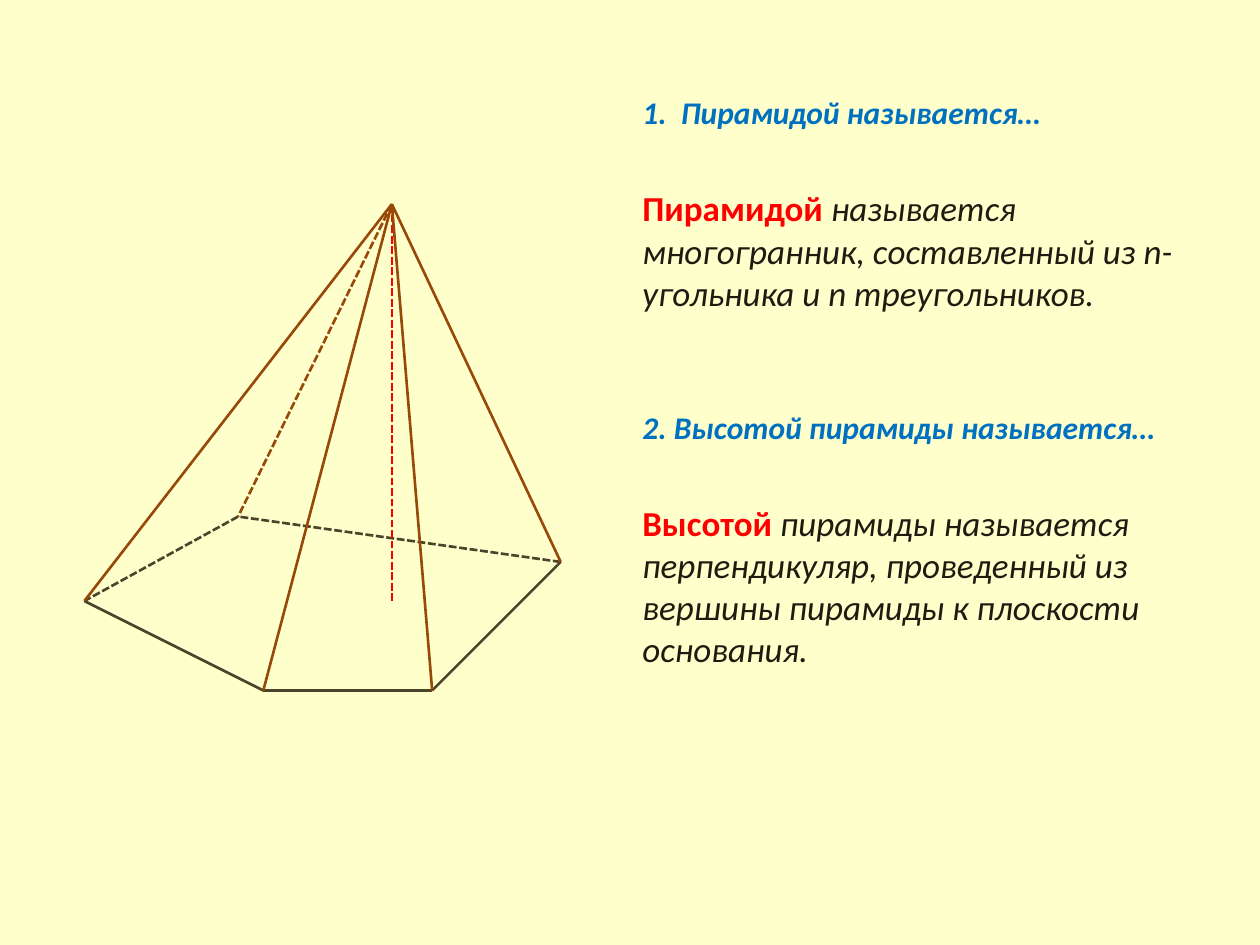
from dataclasses import dataclass
from typing import Any

import pptx
import pptx.dml.color
import pptx.enum.dml
import pptx.enum.shapes
import pptx.oxml.ns
import pptx.util
from lxml import etree

Inches = pptx.util.Inches
Pt = pptx.util.Pt
RGBColor = pptx.dml.color.RGBColor


@dataclass(frozen=True)
class Theme:
    font: str = "Calibri"
    background: str = "FFFFCC"
    heading: str = "0070C0"
    term: str = "FF0000"
    body: str = "1E1C11"
    base_edge: str = "4A452A"
    side_edge: str = "984807"
    height_line: str = "FF0000"
    heading_size: int = 18
    body_size: int = 20
    line_width: float = 1.5


@dataclass(frozen=True)
class Edge:
    start: str
    end: str
    color: str
    hidden: bool = False


@dataclass(frozen=True)
class Definition:
    question: str
    term: str
    explanation: str
    space_before: float


THEME = Theme()

# Format of each kind of text
HEADING = {"size": Pt(THEME.heading_size), "bold": True, "italic": True}
TERM = {"size": Pt(THEME.body_size), "bold": True, "italic": False}
BODY = {"size": Pt(THEME.body_size), "bold": False, "italic": True}
ANSWER_GAP = 32

# Pyramid vertices, in inches
VERTICES = {
    "apex": (3.11, 1.62),
    "foot": (3.11, 4.77),
    "left": (0.67, 4.77),
    "front left": (2.09, 5.48),
    "front right": (3.43, 5.48),
    "right": (4.45, 4.46),
    "back": (1.89, 4.1),
}
BASE = ["left", "front left", "front right", "right", "back"]
SIDES = ["right", "front right", "left", "front left", "back"]

DEFINITIONS = [
    Definition(
        "1.  Пирамидой называется…",
        "Пирамидой ",
        "называется многогранник, составленный из n-угольника и n треугольников.",
        0,
    ),
    Definition(
        "2. Высотой пирамиды называется…",
        "Высотой ",
        "пирамиды называется перпендикуляр, проведенный из вершины пирамиды "
        "к плоскости основания.",
        54,
    ),
]


def pyramid_edges() -> list[Edge]:
    base = [
        Edge(start, end, THEME.base_edge, "back" in (start, end))
        for start, end in zip(BASE, BASE[1:] + BASE[:1])
    ]
    height = Edge("apex", "foot", THEME.height_line, True)
    sides = [Edge("apex", end, THEME.side_edge, end == "back") for end in SIDES]
    return [*base, height, *sides]


def draw_edge(slide: Any, edge: Edge) -> None:
    points = [Inches(value) for name in (edge.start, edge.end) for value in VERTICES[name]]
    connector = slide.shapes.add_connector(
        pptx.enum.shapes.MSO_CONNECTOR.STRAIGHT, *points
    )
    connector.line.color.rgb = RGBColor.from_string(edge.color)
    connector.line.width = Pt(THEME.line_width)
    if edge.hidden:
        # SQUARE_DOT is the sysDot preset, so sysDash is written directly
        dash = etree.SubElement(connector.line._get_or_add_ln(), pptx.oxml.ns.qn("a:prstDash"))
        dash.set("val", "sysDash")
    etree.SubElement(connector._element.spPr, pptx.oxml.ns.qn("a:effectLst"))


def add_run(paragraph: Any, text: str, color: str, text_format: dict[str, Any]) -> None:
    run = paragraph.add_run()
    run.text = text
    for name, value in {"name": THEME.font, **text_format}.items():
        setattr(run.font, name, value)
    run.font.color.rgb = RGBColor.from_string(color)


def draw_definitions(slide: Any, definitions: list[Definition]) -> None:
    box = slide.shapes.add_textbox(Inches(5), Inches(0.69), Inches(4.5), Inches(6.01))
    frame = box.text_frame
    frame.word_wrap = True
    for index, definition in enumerate(definitions):
        question = frame.add_paragraph() if index else frame.paragraphs[0]
        question.space_before = Pt(definition.space_before)
        add_run(question, definition.question, THEME.heading, HEADING)

        answer = frame.add_paragraph()
        answer.space_before = Pt(ANSWER_GAP)
        add_run(answer, definition.term, THEME.term, TERM)
        add_run(answer, definition.explanation, THEME.body, BODY)


def main() -> None:
    presentation = pptx.Presentation()
    presentation.slide_width = Inches(10)
    presentation.slide_height = Inches(7.5)
    slide = presentation.slides.add_slide(presentation.slide_layouts[6])
    slide.background.fill.solid()
    slide.background.fill.fore_color.rgb = RGBColor.from_string(THEME.background)

    # Definitions on the right
    draw_definitions(slide, DEFINITIONS)

    # Pyramid on the left
    for edge in pyramid_edges():
        draw_edge(slide, edge)

    presentation.save("out.pptx")


if __name__ == "__main__":
    main()
